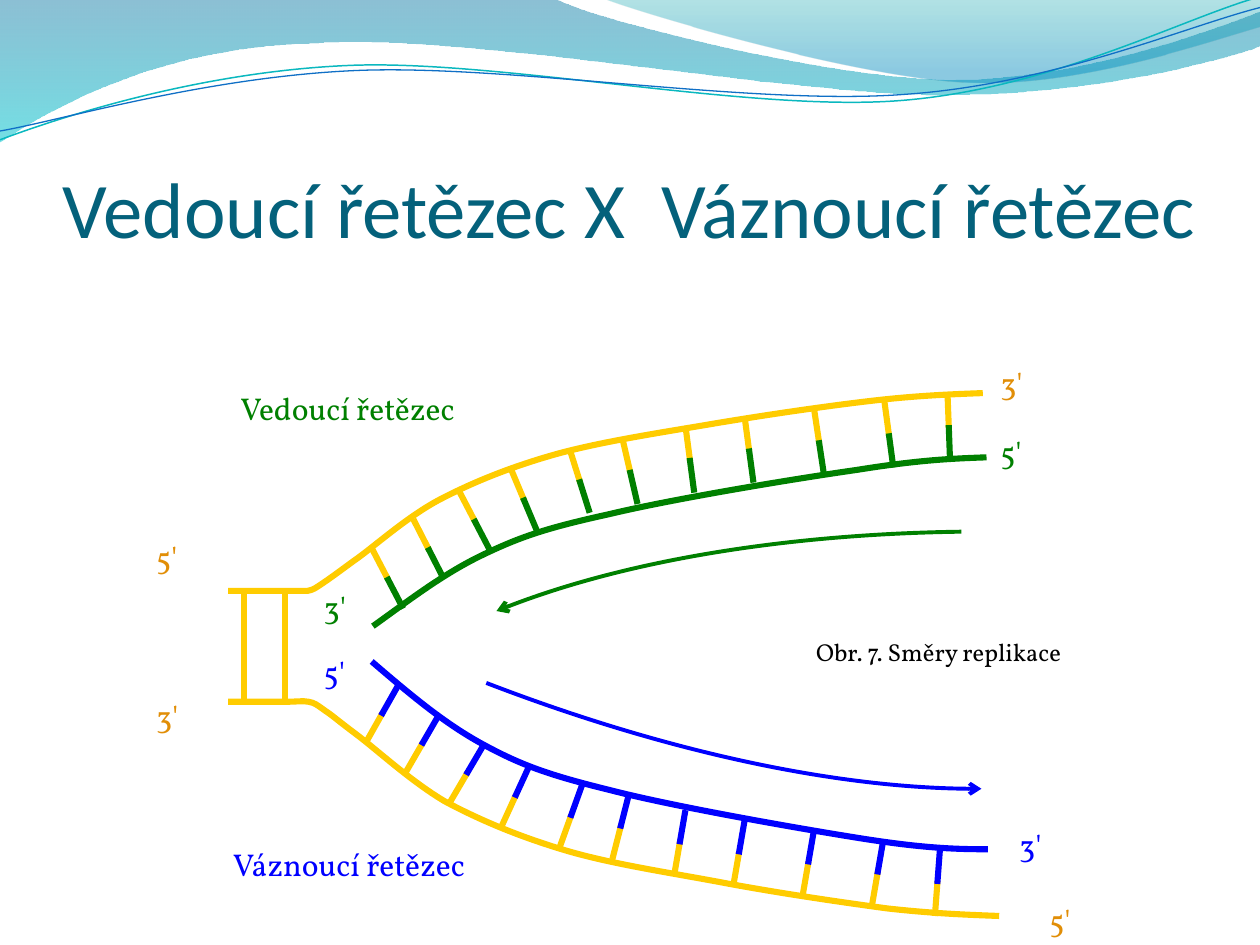
from lxml import etree
from pptx import Presentation
from pptx.dml.color import RGBColor
from pptx.enum import shapes, text
from pptx.oxml.ns import qn
from pptx.util import Inches, Pt

TITLE_TEAL = RGBColor(0x04, 0x61, 0x7B)
LABEL_ORANGE = RGBColor(0xE1, 0x8E, 0x07)
GREEN = RGBColor(0x00, 0x80, 0x00)
BLUE = RGBColor(0x00, 0x00, 0xFF)
YELLOW = RGBColor(0xFF, 0xCC, 0x00)
BLACK = RGBColor(0x00, 0x00, 0x00)
WAVE_TEAL = RGBColor(0x0A, 0xB8, 0xBF)
WAVE_BLUE = RGBColor(0x0F, 0x6F, 0xC6)

STRAND_WIDTH = 3.5
ARROW_WIDTH = 2.25

# Outlines: a start point, then straight (x, y) or cubic (three points) segments
BACK_WAVE = [(0, 0), (4.4, -0.01), (4.76, 0.17, 6.64, 0.63, 7.58, 0.63),
             (8.53, 0.63, 9.58, 0.26, 10, 0.09), (10.01, 0.36),
             (9.83, 0.44, 8.7, 0.76, 7.46, 0.75),
             (6.22, 0.75, 3.82, 0.28, 2.57, 0.34),
             (1.29, 0.36, 0.46, 0.83, -0.01, 1.13)]
FRONT_WAVE = [(4.79, -0.01), (5.09, 0.11, 6.82, 0.62, 7.69, 0.65),
              (8.56, 0.69, 9.61, 0.32, 10, 0.21), (10, 0)]
TEAL_WAVE = [(0, 1.11), (0.48, 0.93, 1.58, 0.57, 2.77, 0.52),
             (3.95, 0.47, 5.93, 0.89, 7.13, 0.8),
             (8.33, 0.71, 9.38, 0.15, 9.98, -0.02)]
BLUE_WAVE = [(0, 1.04), (0.47, 0.96, 1.64, 0.61, 2.83, 0.56),
             (4.03, 0.51, 5.97, 0.84, 7.17, 0.75),
             (8.36, 0.67, 9.41, 0.21, 10, 0.06)]

LOWER_TEMPLATE = [(1.81, 5.57), (1.98, 5.57, 2.15, 5.57, 2.26, 5.57),
                  (2.36, 5.57, 2.4, 5.56, 2.45, 5.57),
                  (2.5, 5.58, 2.51, 5.59, 2.58, 5.64),
                  (2.64, 5.68, 2.67, 5.71, 2.83, 5.83),
                  (2.99, 5.95, 3.26, 6.2, 3.53, 6.36),
                  (3.81, 6.51, 4.12, 6.64, 4.49, 6.75),
                  (4.86, 6.86, 5.34, 6.93, 5.76, 7.01),
                  (6.19, 7.09, 6.67, 7.16, 7.04, 7.21),
                  (7.4, 7.25, 7.66, 7.26, 7.93, 7.27)]
UPPER_TEMPLATE = [(1.81, 4.69), (1.98, 4.69, 2.15, 4.69, 2.25, 4.69),
                  (2.35, 4.69, 2.38, 4.69, 2.44, 4.69),
                  (2.49, 4.68, 2.5, 4.67, 2.56, 4.63),
                  (2.62, 4.59, 2.66, 4.56, 2.81, 4.45),
                  (2.97, 4.34, 3.23, 4.1, 3.5, 3.96),
                  (3.77, 3.82, 4.07, 3.7, 4.43, 3.6),
                  (4.8, 3.5, 5.27, 3.43, 5.68, 3.36),
                  (6.1, 3.29, 6.58, 3.22, 6.93, 3.18),
                  (7.28, 3.14, 7.54, 3.13, 7.8, 3.12)]
LEADING_STRAND = [(7.83, 3.63), (7.56, 3.64, 7.3, 3.65, 6.8, 3.73),
                  (6.31, 3.8, 5.34, 3.96, 4.84, 4.08),
                  (4.34, 4.19, 4.13, 4.26, 3.82, 4.41),
                  (3.51, 4.56, 3.24, 4.77, 2.96, 4.97)]
LAGGING_STRAND = [(7.84, 6.74), (7.57, 6.74, 7.31, 6.73, 6.81, 6.65),
                  (6.31, 6.57, 5.34, 6.4, 4.84, 6.27),
                  (4.35, 6.15, 4.13, 6.07, 3.82, 5.9),
                  (3.51, 5.73, 3.23, 5.49, 2.95, 5.25)]
LEADING_ARROW = [(7.63, 4.22), (6.21, 4.24, 4.87, 4.47, 3.94, 4.85)]
LAGGING_ARROW = [(3.86, 5.42), (5.29, 5.97, 6.72, 6.27, 7.79, 6.26)]

# Rungs: end on the template strand, end on the new strand
LEADING_RUNGS = [(2.95, 4.35, 3.2, 4.83), (3.28, 4.12, 3.52, 4.59),
                 (3.64, 3.89, 3.89, 4.37), (4.05, 3.71, 4.26, 4.21),
                 (4.52, 3.56, 4.68, 4.07), (4.94, 3.48, 5.06, 4),
                 (5.44, 3.38, 5.51, 3.91), (5.91, 3.31, 5.98, 3.83),
                 (6.46, 3.24, 6.54, 3.77), (7.02, 3.19, 7.09, 3.71),
                 (7.52, 3.12, 7.54, 3.65)]
LAGGING_RUNGS = [(2.9, 5.9, 3.16, 5.44), (3.22, 6.13, 3.48, 5.68),
                 (3.57, 6.37, 3.84, 5.91), (3.98, 6.56, 4.2, 6.08),
                 (4.44, 6.73, 4.62, 6.23), (4.86, 6.82, 4.99, 6.31),
                 (5.35, 6.95, 5.44, 6.43), (5.82, 7.03, 5.91, 6.51),
                 (6.37, 7.11, 6.46, 6.59), (6.92, 7.19, 7.01, 6.67),
                 (7.42, 7.27, 7.46, 6.74)]

# Labels: wording, left, top, width, height, colour
LABELS = [("5'", 1.14, 4.22, 0.48, 0.4, LABEL_ORANGE),
          ("3'", 1.14, 5.48, 0.48, 0.43, LABEL_ORANGE),
          ("3'", 7.84, 2.84, 0.48, 0.43, LABEL_ORANGE),
          ("5'", 8.23, 7.1, 0.48, 0.4, LABEL_ORANGE),
          ("5'", 7.84, 3.39, 0.48, 0.43, GREEN),
          ("3'", 2.47, 4.62, 0.48, 0.43, GREEN),
          ("3'", 7.99, 6.51, 0.48, 0.43, BLUE),
          ("5'", 2.47, 5.13, 0.48, 0.43, BLUE),
          ("Vedoucí řetězec", 1.81, 3.04, 2.31, 0.43, GREEN),
          ("Váznoucí řetězec", 1.75, 6.66, 2.43, 0.43, BLUE)]


def add_outline(slide, outline, close=False):
    start, *segments = outline
    points = [(Inches(x), Inches(y)) for segment in segments
              for x, y in zip(segment[::2], segment[1::2])]
    builder = slide.shapes.build_freeform(Inches(start[0]), Inches(start[1]))
    builder.add_line_segments(points, close=close)
    shape = builder.convert_to_shape()
    shape.shadow.inherit = False
    # Merge each run of three points into one cubic curve
    steps = iter(list(shape.element.iter(qn("a:lnTo"))))
    for segment in segments:
        first = next(steps)
        if len(segment) == 6:
            first.tag = qn("a:cubicBezTo")
            for _ in range(2):
                step = next(steps)
                first.append(step[0])
                step.getparent().remove(step)
    return shape


def add_curve(slide, outline, color, width, arrow=False):
    curve = add_outline(slide, outline)
    curve.fill.background()
    curve.line.color.rgb = color
    curve.line.width = Pt(width)
    if arrow:
        etree.SubElement(curve.line._get_or_add_ln(), qn("a:tailEnd"), type="arrow")


def add_wave(slide, outline, stops):
    wave = add_outline(slide, outline, close=True)
    wave.line.fill.background()
    wave.fill.gradient()
    wave.fill.gradient_angle = 270
    for stop, (position, color, opacity) in zip(wave.fill.gradient_stops, stops):
        stop.position = position
        stop.color.rgb = RGBColor.from_string(color)
    for tint, (_, _, opacity) in zip(wave.element.spPr.iter(qn("a:srgbClr")), stops):
        etree.SubElement(tint, qn("a:alpha"), val=str(opacity * 1000))


def add_bar(slide, x1, y1, x2, y2, color):
    bar = slide.shapes.add_connector(shapes.MSO_CONNECTOR.STRAIGHT, Inches(x1),
                                     Inches(y1), Inches(x2), Inches(y2))
    bar.line.color.rgb = color
    bar.line.width = Pt(STRAND_WIDTH)
    etree.SubElement(bar.element.spPr, qn("a:effectLst"))


def add_rung(slide, x1, y1, x2, y2, color):
    """Two halves that overlap slightly in the middle."""
    def along(share):
        return x1 + share * (x2 - x1), y1 + share * (y2 - y1)
    add_bar(slide, x1, y1, *along(0.52), YELLOW)
    add_bar(slide, *along(0.48), x2, y2, color)


def add_label(slide, wording, left, top, width, height, color, size=18, font="Vollkorn"):
    box = slide.shapes.add_textbox(Inches(left), Inches(top), Inches(width), Inches(height))
    frame = box.text_frame
    frame.text = wording
    frame.word_wrap = True
    run_font = frame.paragraphs[0].runs[0].font
    run_font.name, run_font.size, run_font.color.rgb = font, Pt(size), color
    return frame


def main():
    deck = Presentation()
    deck.slide_width, deck.slide_height = Inches(10), Inches(7.5)
    slide = deck.slides.add_slide(deck.slide_layouts[6])

    # Header waves
    add_wave(slide, BACK_WAVE, [(0, "0074A1", 45), (1, "00C6CF", 55)])
    add_wave(slide, FRONT_WAVE, [(0, "00A1A9", 30), (0.8, "008BBF", 45)])
    add_curve(slide, TEAL_WAVE, WAVE_TEAL, 0.85)
    add_curve(slide, BLUE_WAVE, WAVE_BLUE, 0.75)

    # Title
    title = add_label(slide, "Vedoucí řetězec X  Váznoucí řetězec", 0.5, 0.77, 9, 1.25,
                      TITLE_TEAL, 45, "Calibri")
    title.vertical_anchor = text.MSO_ANCHOR.BOTTOM
    title.margin_left = title.margin_right = title.margin_bottom = 0

    # Replication directions
    add_curve(slide, LEADING_ARROW, GREEN, ARROW_WIDTH, arrow=True)
    add_curve(slide, LAGGING_ARROW, BLUE, ARROW_WIDTH, arrow=True)

    # Strands and base pairs
    for x in (1.94, 2.26):
        add_bar(slide, x, 4.69, x, 5.56, YELLOW)
    for strand, color in ((LOWER_TEMPLATE, YELLOW), (UPPER_TEMPLATE, YELLOW),
                          (LEADING_STRAND, GREEN), (LAGGING_STRAND, BLUE)):
        add_curve(slide, strand, color, STRAND_WIDTH)
    for rungs, color in ((LEADING_RUNGS, GREEN), (LAGGING_RUNGS, BLUE)):
        for rung in rungs:
            add_rung(slide, *rung, color)

    # Labels and caption
    for label in LABELS:
        add_label(slide, *label)
    caption = add_label(slide, "Obr. 7. Směry replikace", 5.47, 5.01, 3.96, 0.33, BLACK, 14)
    caption.paragraphs[0].alignment = text.PP_ALIGN.CENTER

    deck.save("out.pptx")


if __name__ == "__main__":
    main()
